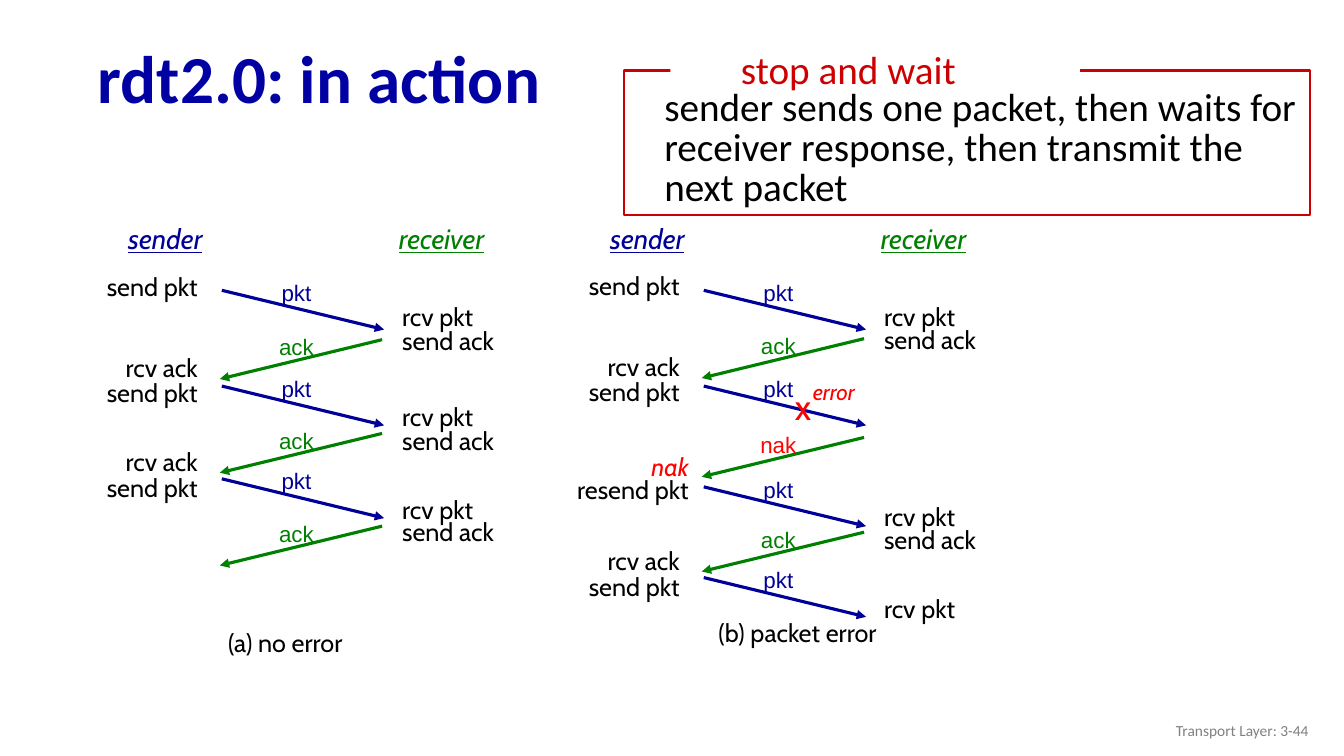
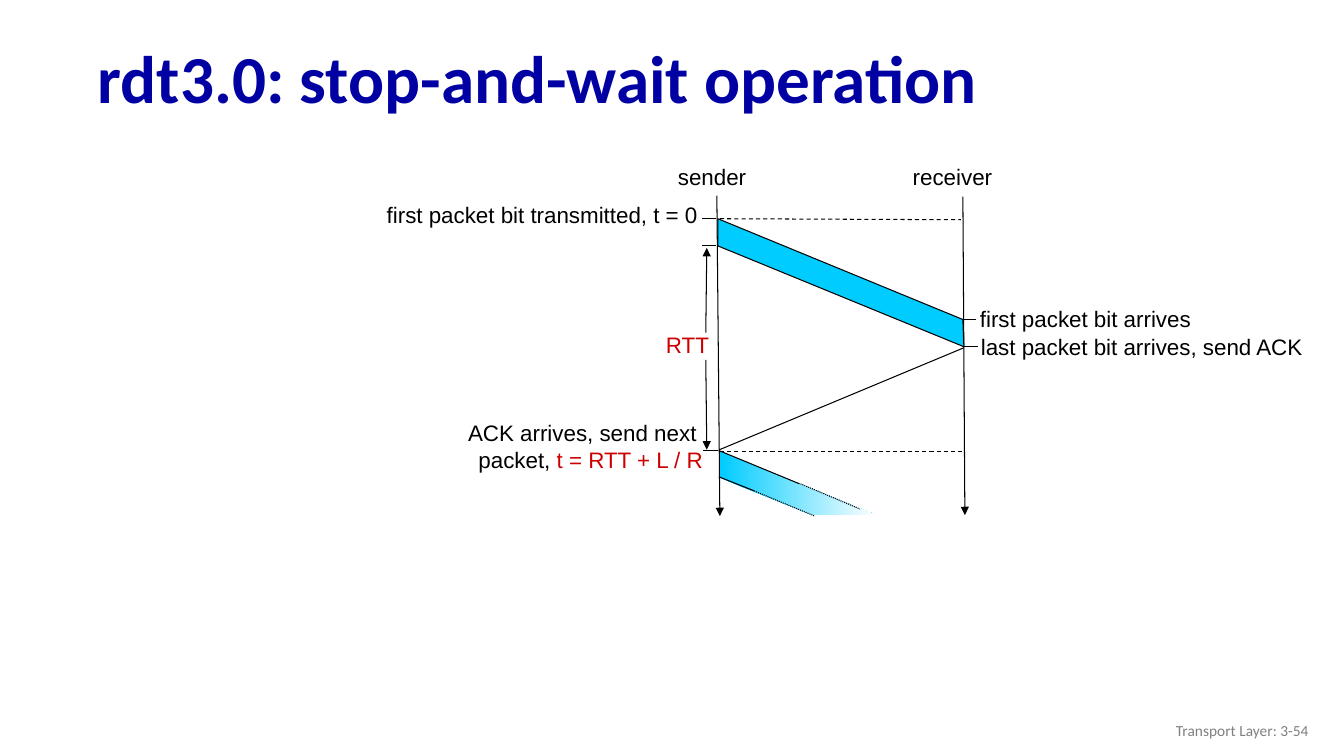
from dataclasses import dataclass, replace

from pptx import Presentation
from pptx import util as u
from pptx.dml.color import RGBColor
from pptx.enum import dml, shapes, text
from pptx.oxml import parse_xml
from pptx.oxml.ns import nsdecls

LEFT, CENTER, RIGHT = text.PP_ALIGN.LEFT, text.PP_ALIGN.CENTER, text.PP_ALIGN.RIGHT
DASH, DOT = dml.MSO_LINE.DASH, dml.MSO_LINE.ROUND_DOT


@dataclass(frozen=True)
class Style:
    font: str
    size: float
    color: str
    bold: bool = False
    italic: bool = False
    underline: bool = False


class Theme:
    title_blue, navy, green = "0000A3", "000099", "008000"
    red, crimson, cyan = "FF0000", "CC0000", "00CCFF"
    black, white, gray = "000000", "FFFFFF", "808080"
    thin, frame, arrow = 0.75, 1.5, 2.25
    title = Style("Calibri", 48, title_blue, bold=True)
    footer = Style("Calibri", 11, gray)
    callout = Style("Calibri", 28, black)
    label = Style("Cabin", 18, black)
    head = Style("Cabin", 20, navy, italic=True, underline=True)
    error = Style("Cabin", 16, red, italic=True)
    message = Style("Arial", 16, black)


ACTION = {
    "title": "rdt2.0: in action",
    "footer": "Transport Layer: 3-44",
    "callout": ("stop and wait",
                "sender sends one packet, then waits for receiver response, "
                "then transmit the next packet"),
}
PANELS = [
    {"offset": 0,
     "caption": ("(a) no error", 2.83, 6.17),
     "sender": [("send pkt", 2.64), ("rcv ack", 3.45), ("send pkt", 3.69),
                ("rcv ack", 4.38), ("send pkt", 4.64)],
     "receiver": [("rcv pkt", 2.94), ("send ack", 3.18), ("rcv pkt", 3.93),
                  ("send ack", 4.17), ("rcv pkt", 4.86), ("send ack", 5.07)],
     "messages": [("pkt", 2.88), ("ack", 3.37), ("pkt", 3.83),
                  ("ack", 4.3), ("pkt", 4.75), ("ack", 5.22)]},
    {"offset": 4.78,
     "caption": ("(b) packet error", 3.13, 6.08),
     "sender": [("send pkt", 2.63), ("rcv ack", 3.44), ("send pkt", 3.68),
                ("rcv ack", 5.36), ("send pkt", 5.62)],
     "receiver": [("rcv pkt", 2.94), ("send ack", 3.17), ("rcv pkt", 4.92),
                  ("send ack", 5.15), ("rcv pkt", 5.84)],
     "messages": [("pkt", 2.88), ("ack", 3.36), ("pkt", 3.83), ("nak", 4.34),
                  ("pkt", 4.83), ("ack", 5.28), ("pkt", 5.73)]},
]
MESSAGE_COLORS = {"pkt": (Theme.navy, Theme.navy), "ack": (Theme.green, Theme.green),
                  "nak": (Theme.green, Theme.red)}

OPERATION = {"title": "rdt3.0: stop-and-wait operation", "footer": "Transport Layer: 3-54"}
TIMING_LABELS = [
    ("sender", (6.53, 1.57, 0.97, 0.38), RIGHT),
    ("receiver", (8.91, 1.57, 1.03, 0.38), RIGHT),
    ("first packet bit transmitted, t = 0", (3.49, 1.95, 3.53, 0.39), RIGHT),
    ("first packet bit arrives", (9.62, 2.98, 2.65, 0.39), LEFT),
    ("last packet bit arrives, send ACK", (9.63, 3.26, 3.41, 0.39), LEFT),
]
TIMING_ARROWS = [
    ((7.11, 1.94), (7.14, 5.12)), ((9.55, 1.95), (9.57, 5.11)),
    ((7, 3.57), (7.01, 4.46)), ((7, 3.3), (7.01, 2.46)),
]
TIMING_LINES = [
    ((7.14, 2.17), (9.53, 2.18), DASH), ((7.14, 4.48), (9.54, 4.48), DASH),
    ((7.14, 4.46), (9.56, 3.45), None),
    ((7.1, 2.17), (6.96, 2.17), None), ((7.1, 2.44), (6.96, 2.44), None),
    ((7.12, 4.47), (6.97, 4.47), None),
    ((9.68, 3.17), (9.53, 3.17), None), ((9.56, 3.44), (9.7, 3.44), None),
]
NEXT_PACKET_EDGES = [
    ((7.13, 4.47), (7.93, 4.8), None), ((7.94, 4.8), (8.53, 5.05), DOT),
    ((7.13, 4.73), (7.48, 4.87), None), ((7.48, 4.87), (8.08, 5.12), DOT),
]
FIRST_PACKET = [(7.12, 2.17), (9.55, 3.17), (9.56, 3.44), (7.12, 2.44)]
NEXT_PACKET = [(7.14, 4.48), (8.69, 5.11), (8.06, 5.11), (7.14, 4.74)]


def rgb(color):
    return RGBColor.from_string(color)


def inches(values):
    return [u.Inches(value) for value in values]


def format_run(span, style):
    font = span.font
    font.name, font.size = style.font, u.Pt(style.size)
    font.bold, font.italic, font.underline = style.bold, style.italic, style.underline
    font.color.rgb = rgb(style.color)


def fill_text(box, paragraphs, align, spacing=None, anchor=text.MSO_ANCHOR.TOP):
    frame = box.text_frame
    frame.word_wrap = True
    frame.auto_size = text.MSO_AUTO_SIZE.NONE
    frame.vertical_anchor = anchor
    for index, spans in enumerate(paragraphs):
        para = frame.add_paragraph() if index else frame.paragraphs[0]
        para.alignment = align
        if spacing:
            para.line_spacing = spacing
        for words, style in spans:
            span = para.add_run()
            span.text = words
            format_run(span, style)


def write(page, at, words, style, align=CENTER, **options):
    paragraphs = [[(words, style)]] if isinstance(words, str) else words
    box = page.shapes.add_textbox(*inches(at))
    fill_text(box, paragraphs, align, **options)


def draw_line(page, start, end, color=Theme.black, width=Theme.thin, dash=None, arrow=False):
    line = page.shapes.add_connector(shapes.MSO_CONNECTOR.STRAIGHT, *inches(start + end))
    line.line.color.rgb = rgb(color)
    line.line.width = u.Pt(width)
    if dash:
        line.line.dash_style = dash
    if arrow:
        line.line._get_or_add_ln().append(
            parse_xml(f'<a:tailEnd {nsdecls("a")} type="triangle"/>'))
    line._element.spPr.append(parse_xml(f'<a:effectLst {nsdecls("a")}/>'))


def draw_box(page, at, fill=None, outline=None):
    box = page.shapes.add_shape(shapes.MSO_SHAPE.RECTANGLE, *inches(at))
    box.shadow.inherit = False
    if fill:
        box.fill.solid()
        box.fill.fore_color.rgb = rgb(fill)
    else:
        box.fill.background()
    if outline:
        box.line.color.rgb = rgb(outline)
        box.line.width = u.Pt(Theme.frame)
    else:
        box.line.fill.background()
    return box


def draw_band(page, points):
    corners = [inches(point) for point in points]
    builder = page.shapes.build_freeform(*corners[0], scale=1.0)
    builder.add_line_segments(corners[1:], close=True)
    band = builder.convert_to_shape()
    band.shadow.inherit = False
    return band


def new_page(deck, content):
    page = deck.slides.add_slide(deck.slide_layouts[5])
    title = page.shapes.title
    title.left, title.top, title.width, title.height = inches((0.87, 0.32, 12.14, 0.98))
    fill_text(title, [[(content["title"], Theme.title)]], LEFT, 0.9, text.MSO_ANCHOR.MIDDLE)
    write(page, (10.08, 7.05, 3, 0.4), content["footer"], Theme.footer, RIGHT,
          anchor=text.MSO_ANCHOR.MIDDLE)
    return page


def draw_message(page, offset, kind, top):
    left, right, drop = 2.2 + offset, 3.81 + offset, 0.39
    line_color, text_color = MESSAGE_COLORS[kind]
    forward = kind == "pkt"
    if forward:
        start, end = (left, top), (right, top + drop)
    else:
        start, end = (right - 0.02, top), (left - 0.02, top + drop)
    draw_line(page, start, end, line_color, Theme.arrow, arrow=True)
    lift = 0.16 if forward else 0.11
    write(page, (2.54 + offset, top - lift, 0.8, 0.37), kind,
          replace(Theme.message, color=text_color))


def draw_panel(page, panel):
    offset = panel["offset"]
    for name, center, color in (("sender", 1.64, Theme.navy), ("receiver", 4.38, Theme.green)):
        write(page, (center - 0.8 + offset, 2.15, 1.6, 0.43), name,
              replace(Theme.head, color=color))
    for side, left, align in (("sender", 0.66, RIGHT), ("receiver", 3.89, LEFT)):
        for words, top in panel[side]:
            write(page, (left + offset, top, 1.4, 0.4), words, Theme.label, align)
    for kind, top in panel["messages"]:
        draw_message(page, offset, kind, top)
    words, center, top = panel["caption"]
    write(page, (center - 1.1 + offset, top, 2.2, 0.4), words, Theme.label)


def build_action(deck):
    page = new_page(deck, ACTION)
    for panel in PANELS:
        draw_panel(page, panel)
    write(page, (7.78, 3.87, 0.37, 0.4), "X", replace(Theme.label, color=Theme.red, bold=True))
    write(page, (7.87, 3.7, 0.8, 0.37), "error", Theme.error)
    nak = replace(Theme.label, color=Theme.red, italic=True)
    write(page, (5.43, 4.5, 1.5, 0.56), [[("nak", nak)], [("resend pkt", Theme.label)]],
          Theme.label, RIGHT, spacing=0.75)
    heading, body = ACTION["callout"]
    draw_box(page, (6.19, 0.7, 6.8, 1.43), outline=Theme.crimson)
    draw_box(page, (7.97, 0.6, 2.74, 0.3), fill=Theme.white)
    tab = draw_box(page, (6.65, 0.4, 3.53, 0.57), fill=Theme.white)
    fill_text(tab, [[(heading, replace(Theme.callout, color=Theme.crimson))]], CENTER)
    write(page, (6.49, 0.84, 6.47, 1.3), body, Theme.callout, LEFT, spacing=0.85)


def build_operation(deck):
    page = new_page(deck, OPERATION)
    for words, at, align in TIMING_LABELS:
        write(page, at, words, Theme.message, align)
    for start, end in TIMING_ARROWS:
        draw_line(page, start, end, arrow=True)
    for start, end, dash in TIMING_LINES:
        draw_line(page, start, end, dash=dash)
    accent = replace(Theme.message, color=Theme.crimson)
    write(page, (6.25, 3.24, 0.88, 0.37), "RTT", accent, RIGHT)
    write(page, (4.13, 4.11, 2.94, 0.69),
          [[("ACK arrives, send next ", Theme.message)],
           [("packet, ", Theme.message), ("t = RTT + L / R", accent)]],
          Theme.message, RIGHT)

    first = draw_band(page, FIRST_PACKET)
    first.fill.solid()
    first.fill.fore_color.rgb = rgb(Theme.cyan)
    first.line.color.rgb = rgb(Theme.black)
    first.line.width = u.Pt(Theme.thin)

    following = draw_band(page, NEXT_PACKET)
    following.line.fill.background()
    following.fill.gradient()
    following.fill.gradient_angle = 0
    for stop, position, color in zip(following.fill.gradient_stops, (0, 1),
                                     (Theme.cyan, Theme.white)):
        stop.position = position
        stop.color.rgb = rgb(color)
    for start, end, dash in NEXT_PACKET_EDGES:
        draw_line(page, start, end, dash=dash)


def main():
    deck = Presentation()
    deck.slide_width, deck.slide_height = inches((13.33, 7.5))
    build_action(deck)
    build_operation(deck)
    deck.save("out.pptx")


if __name__ == "__main__":
    main()
